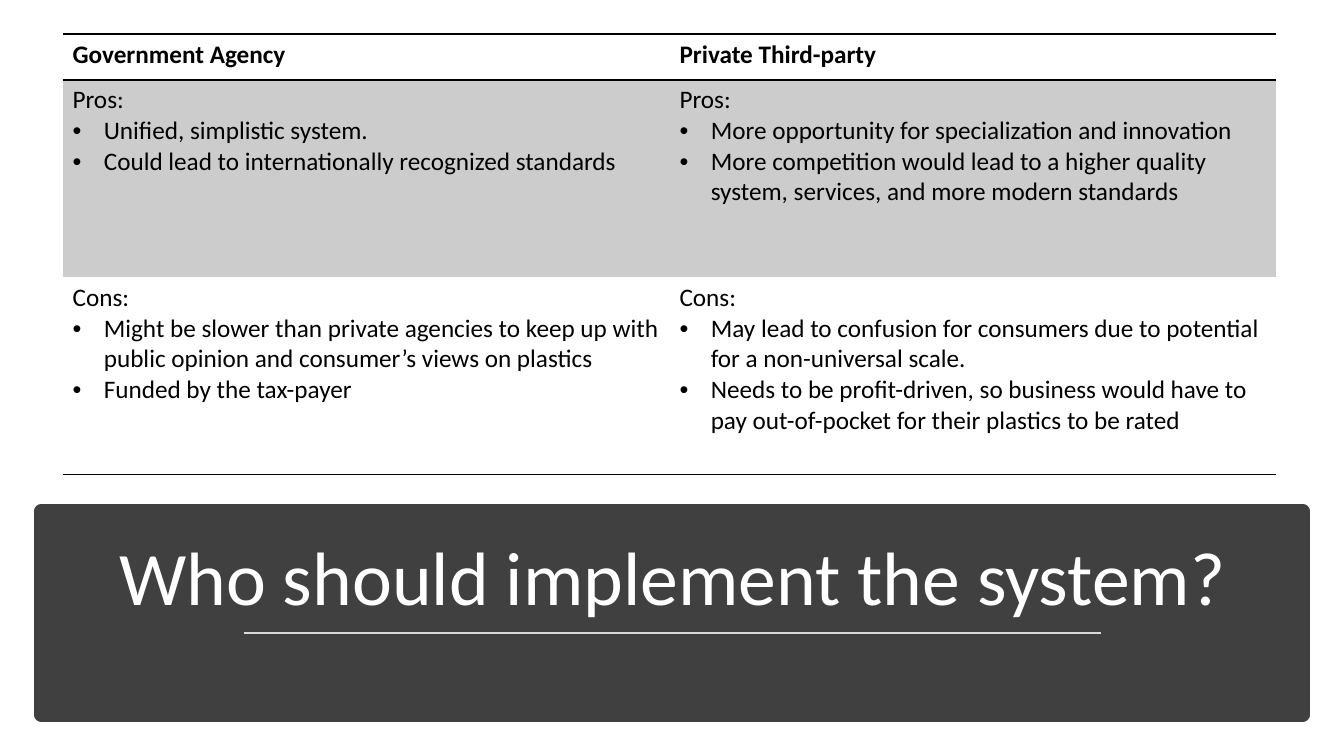
from dataclasses import dataclass

from lxml.etree import SubElement as Sub
from pptx import Presentation
from pptx.dml.color import RGBColor as Rgb
from pptx.enum.shapes import MSO_CONNECTOR as Link, MSO_SHAPE as Shape
from pptx.enum.text import MSO_ANCHOR as Anchor, PP_ALIGN as Align
from pptx.oxml.ns import qn
from pptx.util import Inches, Pt

COLORS = {"band": "404040", "rule": "D9D9D9", "text": "000000",
          "title": "FFFFFF", "shade": "CCCCCC"}
FONT = "Calibri"


@dataclass
class Entry:
    head: str
    points: tuple[str, ...] = ()


@dataclass
class Row:
    height: float
    entries: tuple[Entry, Entry]
    top: float = 0
    bottom: float = 0
    fill: str = ""
    bold: bool = False


ROWS = [
    Row(0.45, (Entry("Government Agency"), Entry("Private Third-party")),
        top=1.5, bottom=1.5, bold=True),
    Row(1.96, (
        Entry("Pros:", (
            "Unified, simplistic system.",
            "Could lead to internationally recognized standards")),
        Entry("Pros:", (
            "More opportunity for specialization and innovation",
            "More competition would lead to a higher quality system, "
            "services, and more modern standards"))),
        top=1.5, fill="shade"),
    Row(1.96, (
        Entry("Cons:", (
            "Might be slower than private agencies to keep up with public "
            "opinion and consumer’s views on plastics",
            "Funded by the tax-payer")),
        Entry("Cons:", (
            "May lead to confusion for consumers due to potential for a "
            "non-universal scale.",
            "Needs to be profit-driven, so business would have to pay "
            "out-of-pocket for their plastics to be rated"))),
        bottom=1),
]


def color(name: str) -> Rgb:
    return Rgb.from_string(COLORS[name])


def style(font, size: float, name: str, bold: bool = False) -> None:
    font.name, font.size, font.bold = FONT, Pt(size), bold
    font.color.rgb = color(name)


def border(cell, side: str, width: float) -> None:
    """Draw one cell edge, or clear it when width is zero."""
    line = Sub(cell._tc.get_or_add_tcPr(), qn(f"a:ln{side}"), w=str(Pt(width)))
    if width:
        Sub(Sub(line, qn("a:solidFill")), qn("a:srgbClr"), val=COLORS["text"])
    else:
        Sub(line, qn("a:noFill"))


def bullet(para) -> None:
    props = para._p.get_or_add_pPr()
    indent = Inches(0.31)
    props.set("marL", str(indent))
    props.set("indent", str(-indent))
    Sub(props, qn("a:buFont"), typeface="Arial")
    Sub(props, qn("a:buChar"), char="•")


def fill_cell(cell, row: Row, entry: Entry) -> None:
    for side, width in zip("LRTB", (0, 0, row.top, row.bottom)):
        border(cell, side, width)
    if row.fill:
        cell.fill.solid()
        cell.fill.fore_color.rgb = color(row.fill)
    else:
        cell.fill.background()
    frame = cell.text_frame
    frame.text = "\n".join((entry.head, *entry.points))
    for i, para in enumerate(frame.paragraphs):
        if i:
            bullet(para)
        style(para.runs[0].font, 18, "text", row.bold)


def add_grid(slide) -> None:
    total = sum(row.height for row in ROWS)
    table = slide.shapes.add_table(
        len(ROWS), 2, Inches(0.62), Inches(0.34),
        Inches(12.04), Inches(total)).table
    table.first_row = table.horz_banding = False
    for r, row in enumerate(ROWS):
        table.rows[r].height = Inches(row.height)
        for c, entry in enumerate(row.entries):
            fill_cell(table.cell(r, c), row, entry)


def add_band(slide) -> None:
    band = slide.shapes.add_shape(
        Shape.RECTANGLE, Inches(0.41), Inches(5.07),
        Inches(12.51), Inches(2.02))
    band.shadow.inherit = False
    band.fill.solid()
    band.fill.fore_color.rgb = color("band")
    band.line.color.rgb = color("band")
    band.line.width = Pt(10)


def add_rule(slide) -> None:
    rule = slide.shapes.add_connector(
        Link.STRAIGHT, Inches(2.42), Inches(6.28),
        Inches(10.92), Inches(6.28))
    rule.line.color.rgb = color("rule")
    rule.line.width = Pt(1.75)
    Sub(rule._element.spPr, qn("a:effectLst"))


def add_title(slide) -> None:
    frame = slide.shapes.add_textbox(
        Inches(0.58), Inches(5.2), Inches(12.18), Inches(1.02)).text_frame
    frame.word_wrap = True
    frame.vertical_anchor = Anchor.BOTTOM
    frame.text = "Who should implement the system?"
    para = frame.paragraphs[0]
    para.alignment = Align.CENTER
    para.line_spacing = 0.9
    style(para.runs[0].font, 54, "title")


def main() -> None:
    deck = Presentation()
    deck.slide_width, deck.slide_height = Inches(13.33), Inches(7.5)
    slide = deck.slides.add_slide(deck.slide_layouts[6])
    add_band(slide)
    add_rule(slide)
    add_title(slide)
    add_grid(slide)
    deck.save("out.pptx")


if __name__ == "__main__":
    main()
